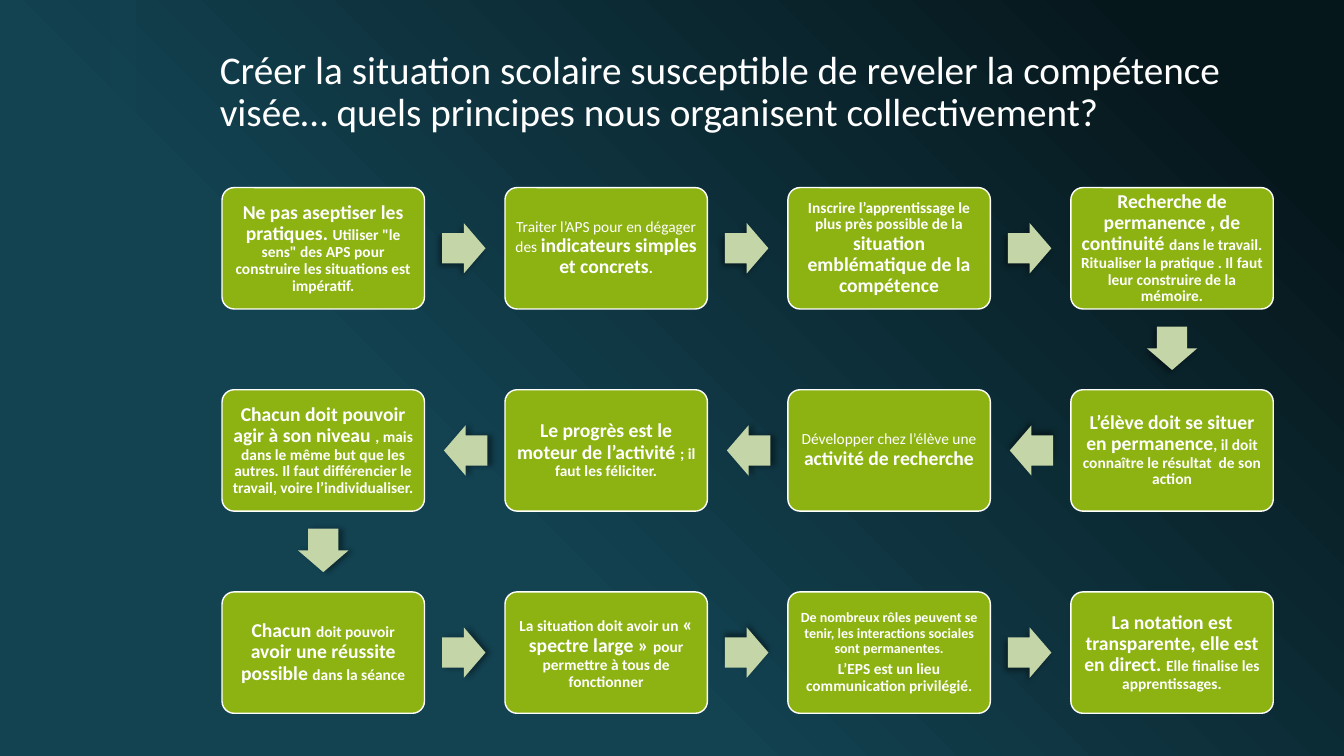
from lxml import etree
from pptx import Presentation
from pptx.dml.color import RGBColor
from pptx.enum.shapes import MSO_SHAPE as Preset
from pptx.enum.text import MSO_ANCHOR as Anchor, MSO_AUTO_SIZE as AutoSize, PP_ALIGN as Align
from pptx.oxml.ns import qn
from pptx.util import Pt

TITLE = ("Créer la situation scolaire susceptible de reveler la compétence visée… "
         "quels principes nous organisent collectivement?")

PRINCIPLES = [
    [[("Ne pas aseptiser les pratiques. ", 14, True),
      ("Utiliser \"le sens\" des APS pour construire les situations est impératif.", 11, True)]],
    [[("Traiter l’APS pour en dégager des ", 11, False),
      ("indicateurs simples et concrets", 14, True), (".", 11, True)]],
    [[("Inscrire l’apprentissage le plus près possible de la ", 11, True),
      ("situation emblématique de la compétence", 14, True)]],
    [[("Recherche de permanence , de continuité ", 14, True),
      ("dans le travail. Ritualiser la pratique . Il faut leur construire de la mémoire.", 11, True)]],
    [[("L’élève doit se situer en permanence", 14, True),
      (", il doit connaître le résultat  de son action", 11, True)]],
    [[("Développer chez l’élève une ", 11, False), ("activité de recherche", 14, True)]],
    [[("Le progrès est le moteur de l’activité ", 14, True),
      ("; il faut les féliciter.", 11, True)]],
    [[("Chacun doit pouvoir agir à son niveau ", 14, True),
      (", mais dans le même but que les autres. Il faut différencier le travail, "
       "voire l’individualiser.", 11, True)]],
    [[("Chacun ", 14, True), ("doit pouvoir ", 11, True),
      ("avoir une réussite possible ", 14, True), ("dans la séance", 11, True)]],
    [[("La situation doit avoir un ", 11, True), ("« spectre large » ", 14, True),
      ("pour permettre à tous de fonctionner", 11, True)]],
    [[("De nombreux rôles peuvent se tenir, les interactions sociales sont permanentes.", 10, True)],
     [("L’EPS est un lieu communication privilégié", 11, True), (".", 10, True)]],
    [[("La notation est transparente, elle est en direct. ", 14, True),
      ("Elle finalise les apprentissages.", 11, True)]],
]
SHADOW_ANGLES = [135, 135, 135, 135, 270, 0, 0, 0, 0, 270, 135]

WHITE, GREEN, PALE_GREEN, TEAL, NIGHT = "FFFFFF", "8DB312", "C4D5A8", "134251", "06171C"
FONT = "Calibri"
COLUMNS = 4
GRID_LEFT, GRID_TOP = 158.6, 134
PITCH_X, PITCH_Y = 202.1, 144.4
BOX_W, BOX_H = 144.6, 86.7
ARROW_LENGTH, ARROW_BREADTH, ARROW_GAP = 31, 36, 12.6


def rgb(value):
    return RGBColor.from_string(value)


def add_filled(preset, left, top, width, height, color):
    shape = slide.shapes.add_shape(preset, Pt(left), Pt(top), Pt(width), Pt(height))
    shape.shadow.inherit = False
    shape.fill.solid()
    shape.fill.fore_color.rgb = rgb(color)
    shape.line.fill.background()
    return shape


def add_run(paragraph, text, size, bold):
    run = paragraph.add_run()
    run.text = text
    run.font.name, run.font.size, run.font.bold = FONT, Pt(size), bold
    run.font.color.rgb = rgb(WHITE)


def set_insets(frame, horizontal, vertical):
    frame.margin_left = frame.margin_right = Pt(horizontal)
    frame.margin_top = frame.margin_bottom = Pt(vertical)


def add_alpha(color, percent):
    etree.SubElement(color, qn("a:alpha"), val=str(percent * 1000))


def cast_shadow(shape, angle):
    effects = shape._element.spPr.find(qn("a:effectLst"))
    shadow = etree.SubElement(effects, qn("a:outerShdw"), blurRad=str(Pt(4)), dist=str(Pt(3)),
                              dir=str(angle * 60000), rotWithShape="0")
    add_alpha(etree.SubElement(shadow, qn("a:srgbClr"), val="000000"), 40)


def box_center(step):
    row, place = divmod(step, COLUMNS)
    column = COLUMNS - 1 - place if row % 2 else place
    return GRID_LEFT + column * PITCH_X + BOX_W / 2, GRID_TOP + row * PITCH_Y + BOX_H / 2


def add_principle(step, paragraphs):
    x, y = box_center(step)
    box = add_filled(Preset.ROUNDED_RECTANGLE, x - BOX_W / 2, y - BOX_H / 2, BOX_W, BOX_H, GREEN)
    box.adjustments[0] = 0.1
    box.line.color.rgb = rgb(WHITE)
    box.line.width = Pt(1)
    frame = box.text_frame
    frame.word_wrap = True
    frame.vertical_anchor = Anchor.MIDDLE
    inset = paragraphs[0][0][1] * 0.3
    set_insets(frame, inset, inset)
    for index, runs in enumerate(paragraphs):
        paragraph = frame.add_paragraph() if index else frame.paragraphs[0]
        paragraph.alignment = Align.CENTER
        paragraph.line_spacing = 0.9
        if index:
            paragraph.space_before = Pt(3.5)
        for run in runs:
            add_run(paragraph, *run)


def add_arrow(step, shadow_angle):
    x, y = box_center(step)
    next_x, next_y = box_center(step + 1)
    reach = ARROW_GAP + ARROW_LENGTH / 2
    if next_y > y:
        y, turn = y + BOX_H / 2 + reach, 90
    elif next_x > x:
        x, turn = x + BOX_W / 2 + reach, 0
    else:
        x, turn = x - BOX_W / 2 - reach, 180
    arrow = add_filled(Preset.RIGHT_ARROW, x - ARROW_LENGTH / 2, y - ARROW_BREADTH / 2,
                       ARROW_LENGTH, ARROW_BREADTH, PALE_GREEN)
    arrow.adjustments[0], arrow.adjustments[1] = 0.6, 0.5
    arrow.rotation = turn
    cast_shadow(arrow, shadow_angle)


deck = Presentation()
deck.slide_width, deck.slide_height = Pt(960), Pt(540)
slide = deck.slides.add_slide(deck.slide_layouts[5])

backdrop = slide.background.fill
backdrop.gradient()
backdrop.gradient_angle = 225
for stop, (position, color) in zip(backdrop.gradient_stops, [(0.1, NIGHT), (0.65, TEAL)]):
    stop.position = position
    stop.color.rgb = rgb(color)

band = add_filled(Preset.RECTANGLE, 79.2, 0, 18, 540, TEAL)
add_alpha(band._element.spPr.find(qn("a:solidFill"))[0], 60)

title = slide.shapes.title
title.left, title.top, title.width, title.height = Pt(149.8), Pt(30.2), Pt(750), Pt(70)
heading = title.text_frame
heading.word_wrap = True
heading.auto_size = AutoSize.NONE
heading.vertical_anchor = Anchor.BOTTOM
set_insets(heading, 7.2, 3.6)
heading.paragraphs[0].alignment = Align.LEFT
heading.paragraphs[0].line_spacing = 0.9
add_run(heading.paragraphs[0], TITLE, 28, False)

for step, paragraphs in enumerate(PRINCIPLES):
    add_principle(step, paragraphs)
for step, shadow_angle in enumerate(SHADOW_ANGLES):
    add_arrow(step, shadow_angle)

deck.save("out.pptx")
